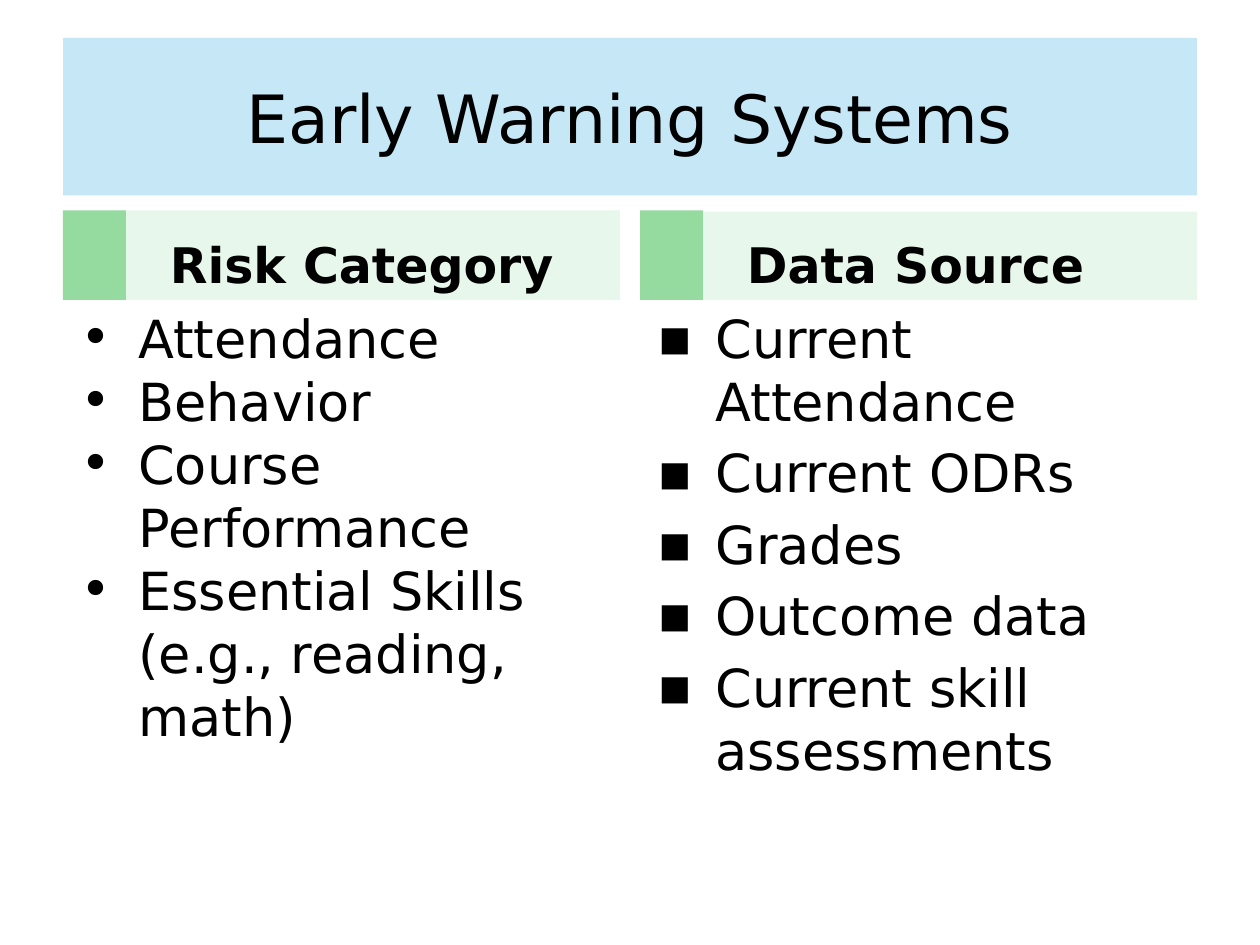
from dataclasses import dataclass

import lxml.etree
import pptx
import pptx.dml.color
import pptx.enum.shapes
import pptx.enum.text
import pptx.oxml.ns
import pptx.util

Inches = pptx.util.Inches
Pt = pptx.util.Pt
Anchor = pptx.enum.text.MSO_ANCHOR


@dataclass(frozen=True)
class Theme:
    font: str = "DejaVu Sans"
    ink: str = "000000"
    banner: str = "A9DCF2"
    banner_opacity: int = 67
    accent: str = "95DA9F"
    heading_fill: str = "E8F7EB"
    title_size: int = 38
    heading_size: int = 28
    body_size: int = 30


def add_child(parent, tag, **attributes):
    return lxml.etree.SubElement(parent, pptx.oxml.ns.qn(tag), attributes)


class SlideBuilder:
    def __init__(self, slide, theme):
        self.slide = slide
        self.theme = theme

    def paint(self, shape, color):
        shape.fill.solid()
        shape.fill.fore_color.rgb = pptx.dml.color.RGBColor.from_string(color)

    def format_frame(self, frame, anchor):
        settings = {
            "word_wrap": True,
            "auto_size": pptx.enum.text.MSO_AUTO_SIZE.NONE,
            "vertical_anchor": anchor,
            "margin_left": Inches(0.1),
            "margin_right": Inches(0.1),
            "margin_top": Inches(0.05),
            "margin_bottom": Inches(0.05),
        }
        for name, value in settings.items():
            setattr(frame, name, value)

    def add_text(self, paragraph, text, size, bold=False):
        run = paragraph.add_run()
        run.text = text
        settings = {"name": self.theme.font, "size": Pt(size), "bold": bold}
        for name, value in settings.items():
            setattr(run.font, name, value)
        run.font.color.rgb = pptx.dml.color.RGBColor.from_string(self.theme.ink)

    def indent(self, paragraph, hanging, space_before):
        """Set the left margin, first-line offset and space above."""
        paragraph.space_before = Pt(space_before)
        properties = paragraph._p.get_or_add_pPr()
        properties.set("marL", str(Inches(0.5)))
        properties.set("indent", str(-Inches(hanging)))
        return properties

    def title(self, text, left, top, width, height):
        banner = self.slide.shapes.title
        places = {"left": left, "top": top, "width": width, "height": height}
        for name, value in places.items():
            setattr(banner, name, Inches(value))
        self.paint(banner, self.theme.banner)
        color = banner._element.spPr.find(".//" + pptx.oxml.ns.qn("a:srgbClr"))
        add_child(color, "a:alpha", val=str(self.theme.banner_opacity * 1000))
        self.format_frame(banner.text_frame, Anchor.MIDDLE)
        paragraph = banner.text_frame.paragraphs[0]
        paragraph.alignment = pptx.enum.text.PP_ALIGN.CENTER
        self.add_text(paragraph, text, self.theme.title_size)

    def block(self, color, left, top, width, height):
        rectangle = self.slide.shapes.add_shape(
            pptx.enum.shapes.MSO_SHAPE.RECTANGLE,
            Inches(left), Inches(top), Inches(width), Inches(height))
        rectangle.shadow.inherit = False
        rectangle.line.fill.background()
        self.paint(rectangle, color)
        return rectangle

    def heading(self, text, left, top, width, height):
        frame = self.block(self.theme.heading_fill, left, top, width, height).text_frame
        self.format_frame(frame, Anchor.BOTTOM)
        paragraph = frame.paragraphs[0]
        paragraph.alignment = pptx.enum.text.PP_ALIGN.LEFT
        self.indent(paragraph, 0.25, 4.2)
        self.add_text(paragraph, text, self.theme.heading_size, bold=True)

    def bullets(self, items, symbol, item_gap, left, top, width, height):
        """List the items; item_gap is the space above all but the first."""
        frame = self.slide.shapes.add_textbox(
            Inches(left), Inches(top), Inches(width), Inches(height)).text_frame
        self.format_frame(frame, Anchor.TOP)
        for index, item in enumerate(items):
            paragraph = frame.add_paragraph() if index else frame.paragraphs[0]
            properties = self.indent(paragraph, 0.46, item_gap if index else 4.8)
            add_child(add_child(properties, "a:buClr"), "a:srgbClr", val=self.theme.ink)
            add_child(properties, "a:buFont", typeface=self.theme.font)
            add_child(properties, "a:buChar", char=symbol)
            self.add_text(paragraph, item, self.theme.body_size)


COLUMNS = [
    # left, heading top, heading, bullet symbol, item gap, items
    (0.5, 1.67, "Risk Category", "•", 0,
     ["Attendance", "Behavior", "Course Performance",
      "Essential Skills (e.g., reading, math)"]),
    (5.08, 1.68, "Data Source", "▪", 4.8,
     ["Current Attendance", "Current ODRs", "Grades", "Outcome data",
      "Current skill assessments"]),
]
COLUMN_WIDTH = 4.42
ACCENT_WIDTH = 0.5
ACCENT_TOP = 1.67
LIST_TOP = 2.38


def main():
    deck = pptx.Presentation()
    deck.slide_width, deck.slide_height = Inches(10), Inches(7.5)
    theme = Theme()
    builder = SlideBuilder(deck.slides.add_slide(deck.slide_layouts[5]), theme)

    builder.title("Early Warning Systems", 0.5, 0.3, 9, 1.25)
    for left, heading_top, heading, symbol, item_gap, items in COLUMNS:
        builder.block(theme.accent, left, ACCENT_TOP, ACCENT_WIDTH, LIST_TOP - ACCENT_TOP)
        builder.heading(heading, left + ACCENT_WIDTH, heading_top,
                        COLUMN_WIDTH - ACCENT_WIDTH, LIST_TOP - heading_top)
        builder.bullets(items, symbol, item_gap, left, LIST_TOP, COLUMN_WIDTH, 4.32)

    deck.save("out.pptx")


if __name__ == "__main__":
    main()
